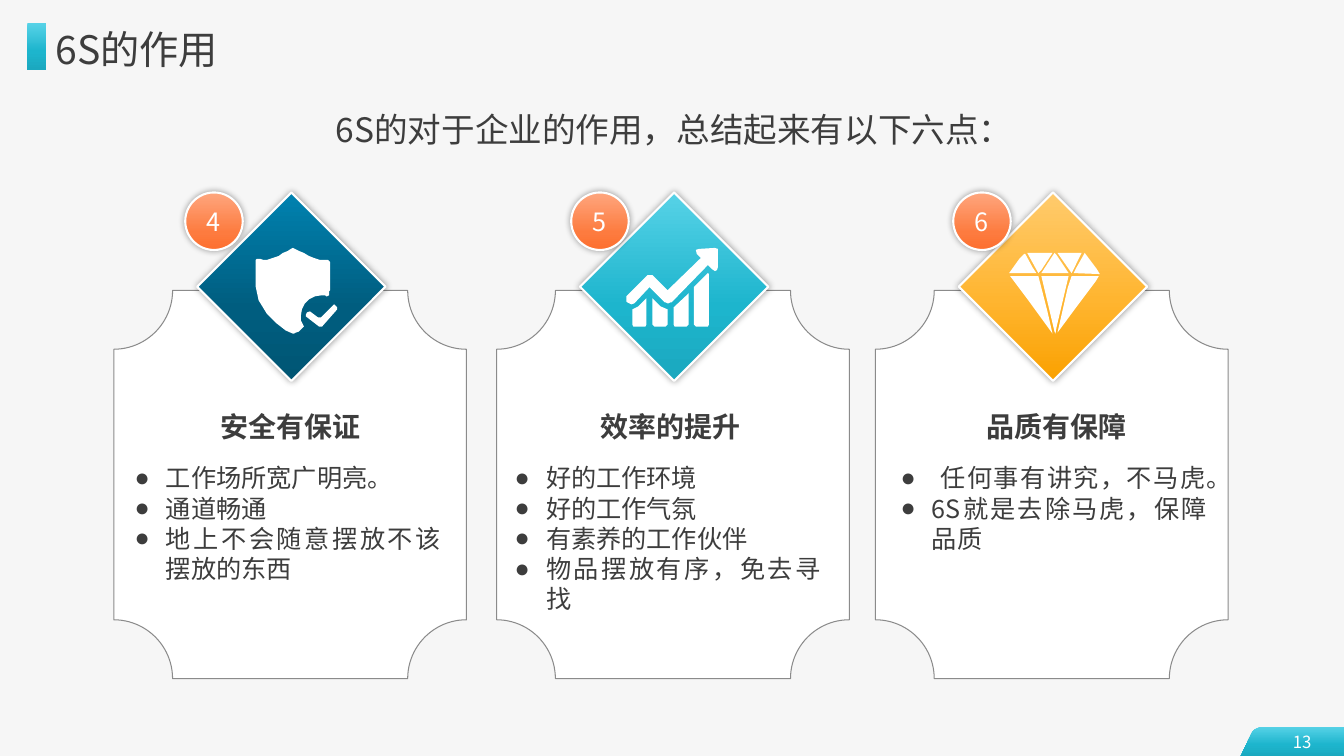
from copy import deepcopy

from lxml import etree
from pptx import Presentation
from pptx.dml.color import RGBColor
from pptx.enum.shapes import MSO_SHAPE
from pptx.enum.text import MSO_ANCHOR, MSO_AUTO_SIZE, PP_ALIGN
from pptx.oxml.ns import qn
from pptx.util import Cm, Pt

LEFT, CENTER, JUSTIFY = PP_ALIGN.LEFT, PP_ALIGN.CENTER, PP_ALIGN.JUSTIFY
FONT = "Noto Sans CJK SC"
COLORS = {"background": "F6F6F6", "text": "3D3D3D", "white": "FFFFFF",
          "outline": "8B8B8B", "shadow": "000000"}
GRADIENTS = {  # (position in percent, colour)
    "blue": [(0, "0082B0"), (61, "005D7F"), (100, "005674")],
    "teal": [(0, "57D2E7"), (60, "1DB5CD"), (100, "1BA8BF")],
    "gold": [(0, "FFCB6D"), (57, "FFB530"), (100, "FAA100")],
    "orange": [(0, "FEA67E"), (70, "FD7B3F"), (100, "FD6F2F")],
}

# Outlines: pairs are corners, six numbers are a cubic curve
OUTLINE_UNIT = Cm(2.54) / 100
FOOTER_TAB = [[(103, 0), (22, 0), (18, 0, 15, 2, 12, 5), (0, 30), (103, 30)]]
SHIELD = [
    [(95, 55), (98, 55, 107, 62, 116, 65), (121, 67, 125, 67, 130, 67), (132, 69),
     (132, 93), (132, 96, 131, 99, 131, 102), (129, 103), (127, 102, 126, 102, 124, 102),
     (112, 102, 103, 111, 103, 122), (103, 126, 104, 130, 106, 133),
     (101, 138, 97, 140, 95, 140), (87, 140, 58, 117, 58, 93), (58, 69),
     (58, 66, 59, 66, 60, 66), (65, 67, 70, 67, 75, 65), (85, 62, 92, 55, 95, 55)],
    [(136, 111), (139, 114), (139, 116), (124, 133), (121, 133), (108, 123), (108, 121),
     (109, 119), (112, 118), (120, 124), (123, 124), (135, 112)],
]
GROWTH = [
    [(66, 105), (66, 131), (65, 133), (53, 133), (52, 131), (52, 116), (58, 113)],
    [(72, 105), (80, 113), (87, 116), (87, 131), (85, 133), (74, 133), (72, 131)],
    [(108, 100), (108, 131), (106, 133), (94, 133), (93, 131), (93, 114)],
    [(127, 80), (128, 81), (128, 131), (127, 133), (115, 133), (113, 131), (113, 94)],
    [(134, 55), (137, 56), (137, 74), (136, 77), (134, 78), (131, 76), (127, 72),
     (91, 109), (90, 110, 85, 110, 84, 109), (69, 94), (54, 110), (51, 111), (47, 109),
     (45, 107, 45, 104, 47, 102), (66, 83), (67, 81, 71, 81, 73, 83), (87, 97),
     (120, 65), (116, 61), (115, 57), (118, 56)],
]
GEM = [
    [(98, 60), (111.5, 80), (122, 60)],
    [(98, 139), (101, 135), (118, 112), (136, 88), (139, 83), (112, 83), (108, 95)],
    [(51, 83), (69, 107), (93, 140), (88, 118), (79, 83)],
    [(82, 83), (95, 138), (96, 140), (97, 134), (109, 83)],
    [(82, 80), (109, 80), (97, 62), (95, 60), (93, 63)],
    [(114, 80), (140, 81), (137, 76), (125, 60), (116, 76)],
    [(50, 80), (77, 80), (73, 74), (66, 61), (65, 61), (60, 66)],
    [(68, 60), (79, 80), (82, 77), (93, 60)],
]

# Card left, heading and badge offsets, list height (cm), number, gradient, icon, texts
CARDS = [
    (2.87, 1.24, 1.8, 3.33, "4", "blue", SHIELD, "安全有保证",
     ["工作场所宽广明亮。", "通道畅通", "地上不会随意摆放不该摆放的东西"]),
    (12.52, 1.17, 1.88, 4.11, "5", "teal", GROWTH, "效率的提升",
     ["好的工作环境", "好的工作气氛", "有素养的工作伙伴", "物品摆放有序，免去寻找"]),
    (22.07, 1.35, 1.96, 2.57, "6", "gold", GEM, "品质有保障",
     [" 任何事有讲究，不马虎。", "6S就是去除马虎，保障品质"]),
]


def rgb(name):
    return RGBColor.from_string(COLORS[name])


def fill_gradient(shape, name):
    shape.fill.gradient()
    shape.fill.gradient_angle = 270
    stop_list = shape.element.spPr.find(".//" + qn("a:gsLst"))
    stop_list.append(deepcopy(stop_list[0]))
    for stop, (position, color) in zip(shape.fill.gradient_stops, GRADIENTS[name]):
        stop.position = position / 100
        stop.color.rgb = RGBColor.from_string(color)


def style_shape(shape, gradient=None, line=None, width=0.75):
    shape.shadow.inherit = False
    if gradient:
        fill_gradient(shape, gradient)
    else:
        shape.fill.solid()
        shape.fill.fore_color.rgb = rgb("white")
    if line:
        shape.line.color.rgb = rgb(line)
        shape.line.width = Pt(width)
    else:
        shape.line.fill.background()


def add_glow_shadow(shape):
    effects = shape.element.spPr.find(qn("a:effectLst"))
    shadow = etree.SubElement(effects, qn("a:outerShdw"), blurRad=str(Pt(5)), dist="0",
                              algn="ctr", rotWithShape="0")
    color = etree.SubElement(shadow, qn("a:srgbClr"), val=COLORS["shadow"])
    etree.SubElement(color, qn("a:alpha"), val="40000")


def add_outline(shapes, left, top, contours):
    """Draw contours whose coordinates start at left, top."""
    builder = None
    for contour in contours:
        points = []
        for step in contour:
            if len(step) == 2:
                points.append(step)
                continue
            start = points[-1]
            controls = [start, step[:2], step[2:4], step[4:]]
            for t in (0.2, 0.4, 0.6, 0.8, 1):
                weights = ((1 - t) ** 3, 3 * t * (1 - t) ** 2, 3 * t * t * (1 - t), t ** 3)
                points.append(tuple(sum(w * c[axis] for w, c in zip(weights, controls))
                                    for axis in (0, 1)))
        if builder is None:
            builder = shapes.build_freeform(*points[0], scale=OUTLINE_UNIT)
        else:
            builder.move_to(*points[0])
        builder.add_line_segments(points[1:], close=True)
    return builder.convert_to_shape(left, top)


def write(shape, lines, size, color="text", align=LEFT, bold=False, bullet=None,
          inset=None, anchor=MSO_ANCHOR.TOP, wrap=True):
    frame = shape.text_frame
    frame.text = "\n".join(lines)
    frame.auto_size, frame.word_wrap = MSO_AUTO_SIZE.NONE, wrap
    frame.vertical_anchor = anchor
    if inset is not None:
        frame.margin_left = frame.margin_right = inset
        frame.margin_top = frame.margin_bottom = inset
    for paragraph in frame.paragraphs:
        paragraph.alignment = align
        if bullet:
            properties = paragraph._p.get_or_add_pPr()
            properties.set("marL", str(Cm(0.79)))
            properties.set("indent", str(-Cm(0.79)))
            etree.SubElement(properties, qn("a:buChar"), char=bullet)
        paragraph.space_before = Pt(0)
        for run in paragraph.runs:
            run.font.size, run.font.bold, run.font.name = Pt(size), bold, FONT
            run.font.color.rgb = rgb(color)
            east_asian = etree.Element(qn("a:ea"), typeface=FONT)
            run.font._element.find(qn("a:latin")).addnext(east_asian)


def place(shape, left, top, width, height):
    shape.left, shape.top, shape.width, shape.height = left, top, width, height
    shape.element.getparent().append(shape.element)  # bring to front


def add_header(slide, left, top):
    marker = slide.shapes.add_shape(MSO_SHAPE.RECTANGLE, left, top, Cm(0.48), Cm(1.19))
    style_shape(marker, "teal")
    title, subtitle = slide.shapes.title, slide.placeholders[1]
    place(title, left + Cm(0.71), top + Cm(0.05), Cm(17.58), Cm(1.19))
    write(title, ["6S的作用"], 28, inset=0, anchor=MSO_ANCHOR.MIDDLE)
    place(subtitle, left + Cm(7.51), top + Cm(2.16), Cm(17.58), Cm(1.02))
    write(subtitle, ["6S的对于企业的作用，总结起来有以下六点："], 24, align=CENTER, inset=0)


def add_card(slide, body, top, card):
    left, heading_offset, badge_offset, list_height, number, gradient, icon, heading, items = card
    left = Cm(left)
    panel = slide.shapes.add_shape(MSO_SHAPE.PLAQUE, left, top + Cm(2.47), Cm(8.89), Cm(9.78))
    style_shape(panel, line="outline")

    # Heading and list
    text_left = left + Cm(heading_offset)
    heading_box = slide.shapes.add_textbox(text_left, top + Cm(5.34), Cm(6.45), Cm(1.12))
    write(heading_box, [heading], 20, align=CENTER, bold=True)
    place(body, text_left - Cm(0.97), top + Cm(6.68), Cm(8.23), Cm(list_height))
    write(body, items, 18, align=JUSTIFY, bullet="●")

    # Diamond with icon
    emblem = slide.shapes.add_group_shape().shapes
    diamond_left = left + Cm(2.1)
    diamond = emblem.add_shape(MSO_SHAPE.DIAMOND, diamond_left, top, Cm(4.75), Cm(4.75))
    style_shape(diamond, gradient, "white", 1.5)
    add_glow_shadow(diamond)
    style_shape(add_outline(emblem, diamond_left, top, icon))

    # Number badge
    badge = slide.shapes.add_shape(MSO_SHAPE.OVAL, left + Cm(badge_offset), top,
                                   Cm(1.45), Cm(1.45))
    style_shape(badge, "orange", "white", 1.5)
    add_glow_shadow(badge)
    write(badge, [number], 18, "white", CENTER, anchor=MSO_ANCHOR.MIDDLE, wrap=False)


def add_footer(slide, left, top):
    style_shape(add_outline(slide.shapes, left, top, FOOTER_TAB), "teal")
    number = slide.shapes.add_textbox(left + Cm(1.02), top, Cm(1.07), Cm(0.76))
    write(number, ["13"], 12, "white", CENTER, anchor=MSO_ANCHOR.MIDDLE, wrap=False)


def main():
    presentation = Presentation()
    presentation.slide_width, presentation.slide_height = Cm(33.88), Cm(19.05)
    slide = presentation.slides.add_slide(presentation.slide_layouts[4])
    slide.background.fill.solid()
    slide.background.fill.fore_color.rgb = rgb("background")
    add_footer(slide, Cm(31.27), Cm(18.31))
    add_header(slide, Cm(0.69), Cm(0.58))
    for index, card in enumerate(CARDS, start=2):
        add_card(slide, slide.placeholders[index], Cm(4.85), card)
    presentation.save("out.pptx")


if __name__ == "__main__":
    main()
